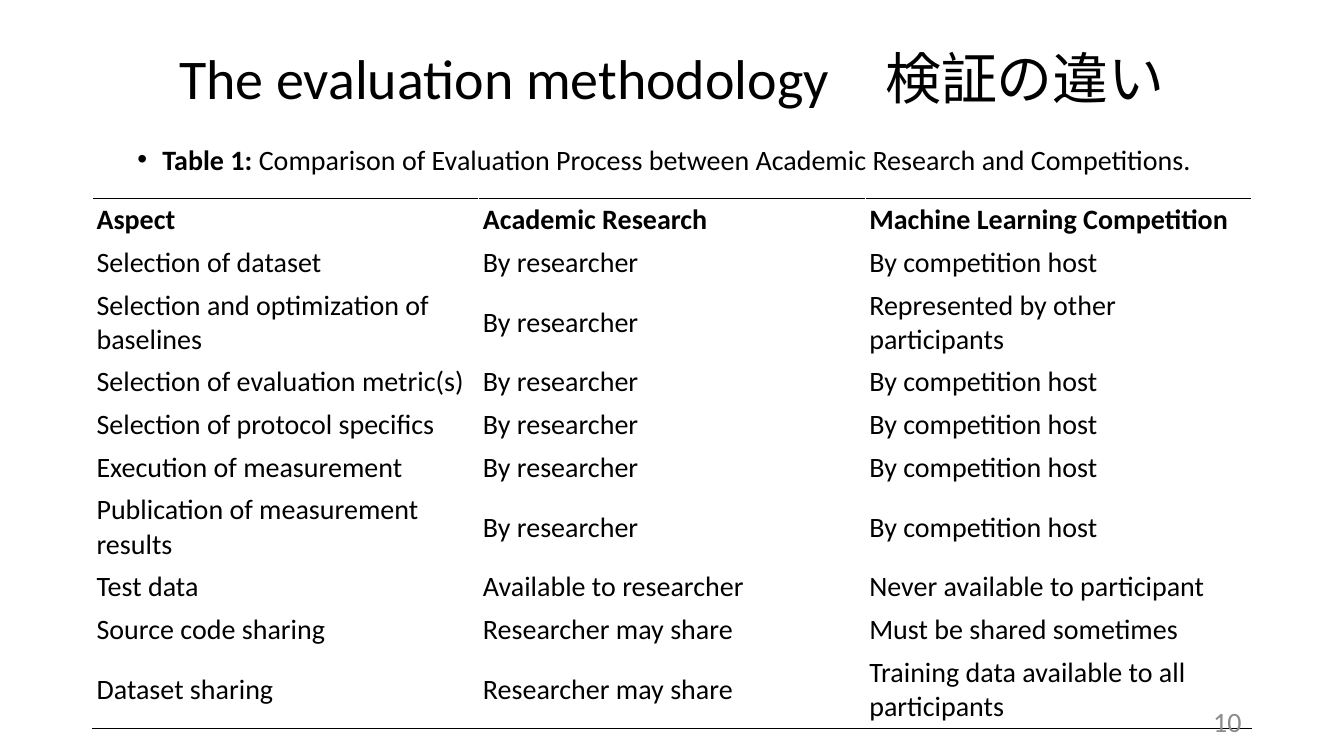
from pptx import Presentation, util as u
from pptx.dml import color
from pptx.enum import text
from pptx.oxml import parse_xml
from pptx.oxml.ns import nsdecls

ROWS = [
    ("Aspect", "Academic Research", "Machine Learning Competition"),
    ("Selection of dataset", "By researcher", "By competition host"),
    ("Selection and optimization of baselines", "By researcher", "Represented by other participants"),
    ("Selection of evaluation metric(s)", "By researcher", "By competition host"),
    ("Selection of protocol specifics", "By researcher", "By competition host"),
    ("Execution of measurement", "By researcher", "By competition host"),
    ("Publication of measurement results", "By researcher", "By competition host"),
    ("Test data", "Available to researcher", "Never available to participant"),
    ("Source code sharing", "Researcher may share", "Must be shared sometimes"),
    ("Dataset sharing", "Researcher may share", "Training data available to all participants"),
]
BLACK = "000000"
GREY = "8C8C8C"
CENTER = text.PP_ALIGN.CENTER
MIDDLE = text.MSO_ANCHOR.MIDDLE
COLUMN_WIDTH = 276
ROW_HEIGHT = 26
CELL_FORMAT = {"vertical_anchor": MIDDLE} | {
    f"margin_{side}": u.Pt(3) for side in ("left", "right", "top", "bottom")
}


def set_format(target, values):
    for name, value in values.items():
        setattr(target, name, value)


def paint(target, hex_color):
    target.rgb = color.RGBColor.from_string(hex_color)


def add_span(para, words, size=20, bold=False, hex_color=BLACK):
    span = para.add_run()
    span.text = words
    set_format(span.font, {"name": "Calibri", "size": u.Pt(size), "bold": bold})
    paint(span.font.color, hex_color)


def place_text(box, bounds, **para_format):
    names = ("left", "top", "width", "height")
    set_format(box, {name: u.Pt(value) for name, value in zip(names, bounds)})
    set_format(box.text_frame, {
        "word_wrap": True,
        "auto_size": text.MSO_AUTO_SIZE.NONE,
        "vertical_anchor": MIDDLE,
    })
    para = box.text_frame.paragraphs[0]
    set_format(para, para_format)
    return para


def add_rule(cell, edge):
    cell._tc.get_or_add_tcPr().insert(0, parse_xml(
        f'<a:{edge} {nsdecls("a")} w="{u.Pt(1)}"><a:solidFill>'
        f'<a:srgbClr val="{BLACK}"/></a:solidFill></a:{edge}>'
    ))


def add_comparison(page, left, top):
    last = len(ROWS) - 1
    columns = len(ROWS[0])
    table = page.shapes.add_table(
        len(ROWS), columns, u.Pt(left), u.Pt(top),
        u.Pt(COLUMN_WIDTH * columns), u.Pt(ROW_HEIGHT * len(ROWS)),
    ).table
    table.horz_banding = False
    for r, row in enumerate(ROWS):
        for c, words in enumerate(row):
            cell = table.cell(r, c)
            set_format(cell, CELL_FORMAT)
            cell.fill.background()
            add_span(cell.text_frame.paragraphs[0], words, bold=r == 0)
            if r == 0:
                add_rule(cell, "lnT")
            elif r == last:
                add_rule(cell, "lnB")


def main():
    deck = Presentation()
    set_format(deck, {"slide_width": u.Pt(960), "slide_height": u.Pt(540)})
    page = deck.slides.add_slide(deck.slide_layouts[1])

    title = place_text(page.shapes.title, (79, 14, 802, 88), alignment=CENTER, line_spacing=0.9)
    add_span(title, "The evaluation methodology　検証の違い", size=40)

    caption = place_text(
        page.placeholders[1], (79, 85, 802, 60),
        alignment=CENTER, line_spacing=0.9, space_before=u.Pt(0), space_after=u.Pt(6),
    )
    indents = caption._p.get_or_add_pPr()
    indents.set("marL", "0")
    indents.set("indent", str(-u.Pt(18)))
    add_span(caption, "Table 1:", bold=True)
    add_span(caption, " Comparison of Evaluation Process between Academic Research and Competitions.")

    add_comparison(page, 66, 142)

    number_box = page.shapes.add_textbox(0, 0, 0, 0)
    number = place_text(number_box, (678, 500.5, 216, 29), alignment=text.PP_ALIGN.RIGHT)
    add_span(number, "10", hex_color=GREY)

    deck.save("out.pptx")


if __name__ == "__main__":
    main()
